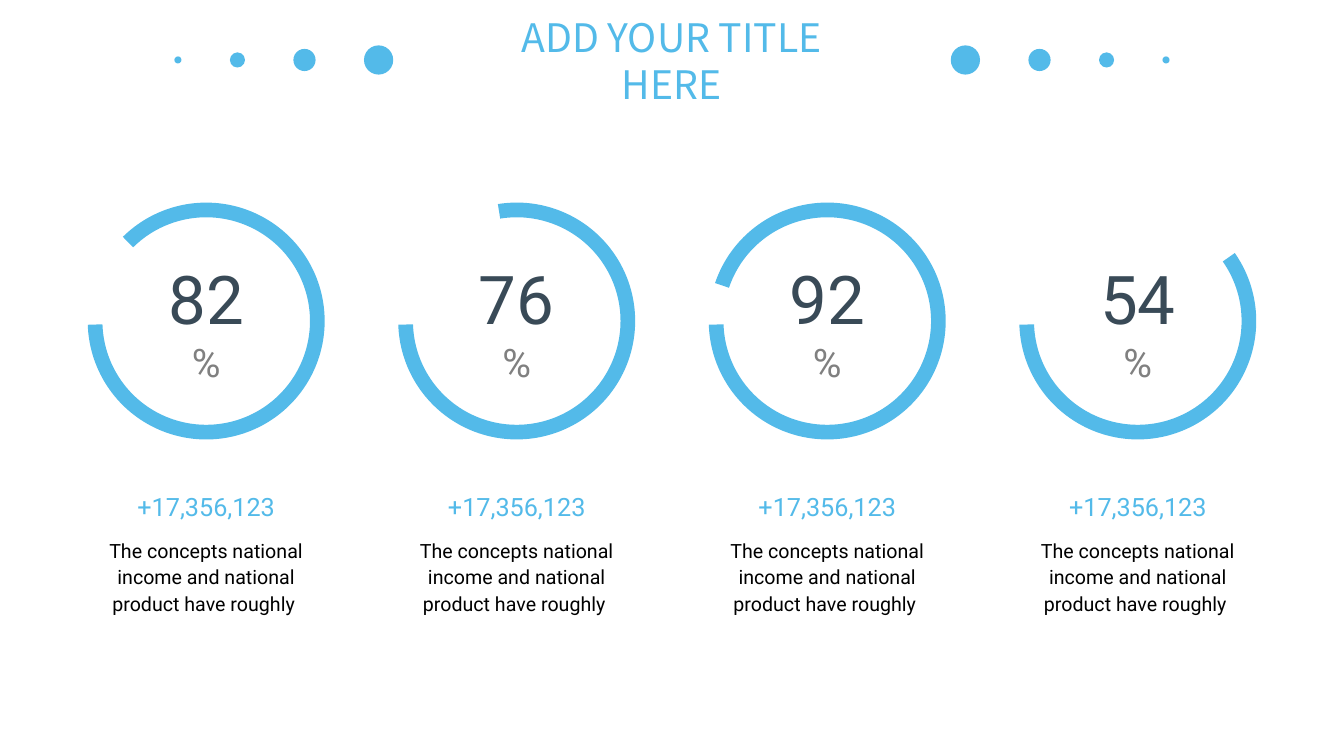
from dataclasses import dataclass

from pptx import Presentation
from pptx.dml.color import RGBColor
from pptx.enum.shapes import MSO_SHAPE
from pptx.enum.text import MSO_ANCHOR, PP_ALIGN
from pptx.util import Inches, Pt


@dataclass(frozen=True)
class Theme:
    blue: str = "53BAE9"
    slate: str = "394A57"
    gray: str = "808080"
    black: str = "000000"
    head: str = "Noto Sans CJK SC"
    text: str = "Roboto"
    huge: int = 48
    large: int = 28
    mid: int = 18
    small: int = 14


THEME = Theme()
MID = 6.665  # axis of the title and its dots
ROW = 0.595  # centre line of the title and its dots
FIRST, STEP = 2.045, 3.08  # centre of the first ring, pitch of the rings
RING, BAND = 2.35, 0.062
END = 178.19  # angle at which every ring stops
TOTAL = "+17,356,123"
NOTE = "The concepts national income and national product have roughly "
RATES = [("82", 225.3), ("76", 260.85), ("92", 198.7), ("54", 324.98)]


def apply(item, style):
    for name, value in style.items():
        setattr(item, name, value)


def write(para, text, size, color, face=THEME.text):
    run = para.add_run()
    run.text = text
    apply(run.font, {"name": face, "size": Pt(size)})
    run.font.color.rgb = RGBColor.from_string(color)


def frame(shape, anchor=MSO_ANCHOR.TOP, wrap=True):
    """Set up the text frame and return its centred first paragraph."""
    body = shape.text_frame
    apply(body, {"word_wrap": wrap, "vertical_anchor": anchor})
    para = body.paragraphs[0]
    para.alignment = PP_ALIGN.CENTER
    return para


def add_box(slide, mid, top, width, height, **style):
    box = slide.shapes.add_textbox(
        Inches(mid - width / 2), Inches(top), Inches(width), Inches(height))
    return frame(box, **style)


def add_round(slide, kind, x, y, size):
    """Add a blue shape of equal sides around the centre x, y."""
    shape = slide.shapes.add_shape(
        kind, Inches(x - size / 2), Inches(y - size / 2),
        Inches(size), Inches(size))
    shape.shadow.inherit = False
    shape.fill.solid()
    shape.fill.fore_color.rgb = RGBColor.from_string(THEME.blue)
    shape.line.fill.background()
    return shape


def add_title(slide, text):
    title = slide.shapes.title
    place = {"left": 4.57, "top": 0.31, "width": 4.18, "height": 0.57}
    apply(title, {name: Inches(value) for name, value in place.items()})
    para = frame(title, anchor=MSO_ANCHOR.MIDDLE)
    write(para, text, THEME.large, THEME.blue, THEME.head)


def add_dots(slide, side):
    """Add the shrinking dots on one side (-1 left, 1 right) of the title."""
    edge, gap = 2.765, 0.48
    for size in (0.29, 0.22, 0.15, 0.07):
        add_round(slide, MSO_SHAPE.OVAL,
                  MID + side * (edge + size / 2), ROW, size)
        edge += size + gap


def add_rate(slide, mid, value, start):
    ring = add_round(slide, MSO_SHAPE.BLOCK_ARC, mid, 3.185, RING)
    # An adjustment unit is 100000, a degree is 60000.
    for i, part in enumerate((start * 0.6, END * 0.6, BAND)):
        ring.adjustments[i] = part

    para = add_box(slide, mid, 2.73, 1.2, 0.91,
                   anchor=MSO_ANCHOR.MIDDLE, wrap=False)
    write(para, value, THEME.huge, THEME.slate)
    para.add_line_break()
    write(para, "%", THEME.large, THEME.gray)

    para = add_box(slide, mid, 4.83, 1.69, 0.4, wrap=False)
    write(para, TOTAL, THEME.mid, THEME.blue)

    para = add_box(slide, mid, 5.26, 2.6, 0.91)
    para.line_spacing = 1.14
    write(para, NOTE, THEME.small, THEME.black)


def main():
    deck = Presentation()
    apply(deck, {"slide_width": Inches(13.33), "slide_height": Inches(7.5)})
    slide = deck.slides.add_slide(deck.slide_layouts[5])
    add_title(slide, "ADD YOUR TITLE HERE")
    for side in (-1, 1):
        add_dots(slide, side)
    for i, (value, start) in enumerate(RATES):
        add_rate(slide, FIRST + i * STEP, value, start)
    deck.save("out.pptx")


if __name__ == "__main__":
    main()
